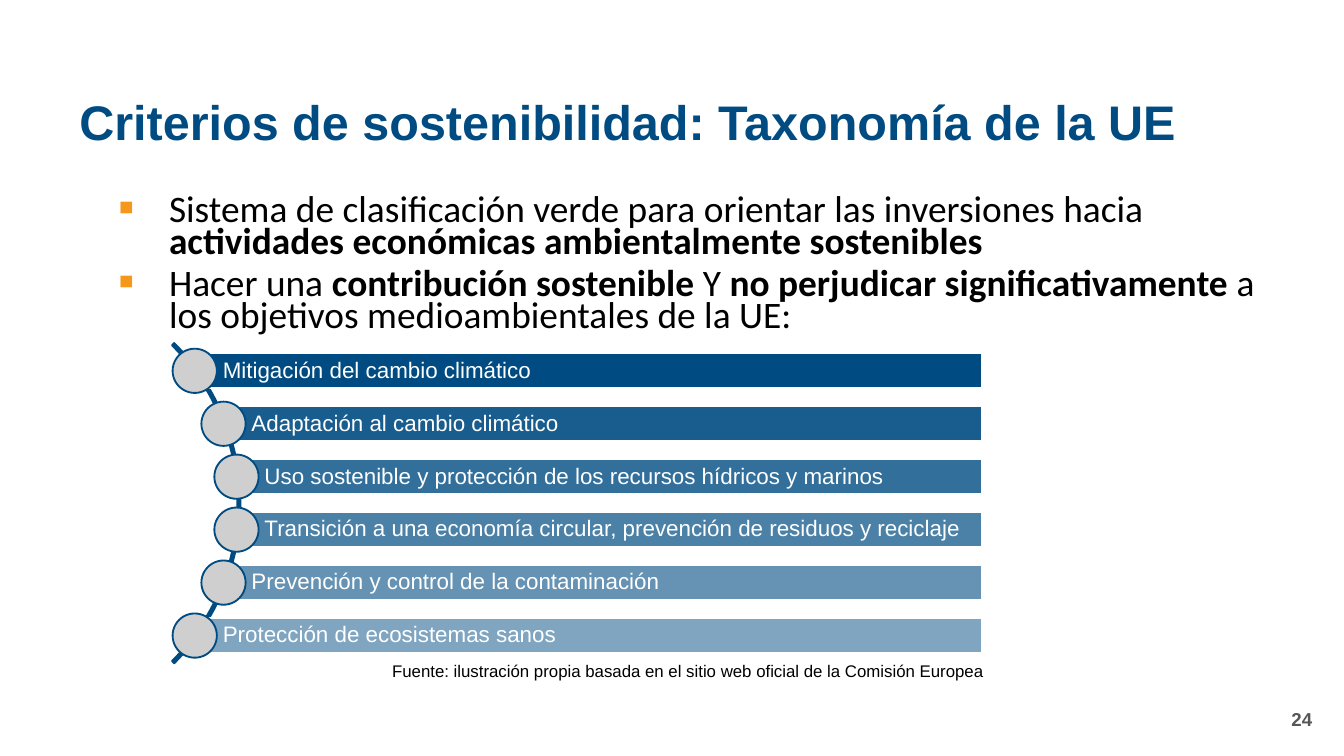
import math

import pptx
import pptx.dml.color
import pptx.enum.shapes
import pptx.enum.text
import pptx.oxml
import pptx.oxml.ns
import pptx.util

Pt = pptx.util.Pt
Shape = pptx.enum.shapes.MSO_SHAPE
Align = pptx.enum.text.PP_ALIGN
Anchor = pptx.enum.text.MSO_ANCHOR

COLOURS = {
    "blue": "004C82",
    "orange": "F4971A",
    "circle": "CFCFCF",
    "grey": "575756",
    "black": "000000",
    "white": "FFFFFF",
}

BULLETS = [
    [("Sistema de clasificación verde para orientar las inversiones hacia ", False),
     ("actividades económicas ambientalmente sostenibles", True)],
    [("Hacer una ", False),
     ("contribución sostenible ", True),
     ("Y ", False),
     ("no perjudicar significativamente", True),
     (" a los objetivos medioambientales de la UE:", False)],
]

OBJECTIVES = [
    "Mitigación del cambio climático",
    "Adaptación al cambio climático",
    "Uso sostenible y protección de los recursos hídricos y marinos",
    "Transición a una economía circular, prevención de residuos y reciclaje",
    "Prevención y control de la contaminación",
    "Protección de ecosistemas sanos",
]

# Circles sit on an arc around this centre, at equal vertical steps.
ARC_X, ARC_Y, ARC_SIZE = 7.56, 269.6, 242.64
RADIUS, ROW_STEP = 120, 28.37
BAR_RIGHT, BAR_HEIGHT, CIRCLE_SIZE = 526.3, 18.9, 23.7


def colour(name):
    return pptx.dml.color.RGBColor.from_string(COLOURS[name])


class SlideBuilder:
    def __init__(self, slide):
        self.slide = slide
        self.font = "Arial"

    def add_run(self, paragraph, text, size, color, bold=False, font=None):
        run = paragraph.add_run()
        run.text = text
        run.font.name = font or self.font
        run.font.size = Pt(size)
        run.font.bold = bold
        run.font.color.rgb = colour(color)

    def title(self, text, left, top, width, height):
        title = self.slide.shapes.title
        title.left, title.top = Pt(left), Pt(top)
        title.width, title.height = Pt(width), Pt(height)
        title.text_frame.vertical_anchor = Anchor.MIDDLE
        paragraph = title.text_frame.paragraphs[0]
        paragraph.alignment = Align.LEFT
        paragraph.line_spacing = 0.9
        self.add_run(paragraph, text, 26, "blue", True)

    def text_box(self, left, top, width, height):
        box = self.slide.shapes.add_textbox(Pt(left), Pt(top), Pt(width), Pt(height))
        box.text_frame.word_wrap = True
        return box.text_frame

    def label(self, text, area, size, color, bold=False, align=Align.LEFT, anchor=Anchor.TOP):
        frame = self.text_box(*area)
        frame.vertical_anchor = anchor
        paragraph = frame.paragraphs[0]
        paragraph.alignment = align
        self.add_run(paragraph, text, size, color, bold)

    def bullet_list(self, items, area):
        frame = self.text_box(*area)
        for index, runs in enumerate(items):
            paragraph = frame.add_paragraph() if index else frame.paragraphs[0]
            self.add_bullet(paragraph)
            paragraph.line_spacing = 0.7
            if index:
                paragraph.space_before = Pt(6)
            for text, bold in runs:
                self.add_run(paragraph, text, 20, "black", bold, "Calibri")

    def add_bullet(self, paragraph):
        properties = paragraph._p.get_or_add_pPr()
        properties.set("marL", str(Pt(48.2)))
        properties.set("indent", str(Pt(-27.2)))
        namespace = pptx.oxml.ns.nsdecls("a")
        for xml in (
            f'<a:buClr {namespace}><a:srgbClr val="{COLOURS["orange"]}"/></a:buClr>',
            f'<a:buSzPct {namespace} val="125000"/>',
            f'<a:buFont {namespace} typeface="Arial"/>',
            f'<a:buChar {namespace} char="▪"/>',
        ):
            properties.append(pptx.oxml.parse_xml(xml))

    def shape(self, kind, left, top, width, height, fill, line):
        shape = self.slide.shapes.add_shape(kind, Pt(left), Pt(top), Pt(width), Pt(height))
        shape.shadow.inherit = False
        shape.fill.solid()
        shape.fill.fore_color.rgb = colour(fill)
        shape.line.color.rgb = colour(line)
        shape.line.width = Pt(1)
        return shape

    def arc(self):
        arc = self.shape(Shape.BLOCK_ARC, ARC_X - ARC_SIZE / 2, ARC_Y - ARC_SIZE / 2,
                         ARC_SIZE, ARC_SIZE, "blue", "blue")
        for index, value in enumerate((189, 27, 0.007)):
            arc.adjustments[index] = value

    def bar(self, text, left, middle, opacity):
        bar = self.shape(Shape.RECTANGLE, left, middle - BAR_HEIGHT / 2,
                         BAR_RIGHT - left, BAR_HEIGHT, "blue", "white")
        self.set_opacity(bar, opacity)
        frame = bar.text_frame
        frame.word_wrap = True
        frame.vertical_anchor = Anchor.MIDDLE
        frame.margin_left = Pt(15)
        frame.margin_top = frame.margin_right = frame.margin_bottom = Pt(2.2)
        paragraph = frame.paragraphs[0]
        paragraph.alignment = Align.LEFT
        paragraph.line_spacing = 0.9
        self.add_run(paragraph, text, 12, "white")

    def set_opacity(self, shape, percent):
        fill = shape._element.spPr.find(pptx.oxml.ns.qn("a:solidFill"))
        namespace = pptx.oxml.ns.nsdecls("a")
        fill[0].append(pptx.oxml.parse_xml(f'<a:alpha {namespace} val="{percent * 1000}"/>'))

    def circle(self, center_x, center_y):
        self.shape(Shape.OVAL, center_x - CIRCLE_SIZE / 2, center_y - CIRCLE_SIZE / 2,
                   CIRCLE_SIZE, CIRCLE_SIZE, "circle", "blue")

    def objectives(self, texts):
        self.arc()
        for index, text in enumerate(texts):
            offset = (index - (len(texts) - 1) / 2) * ROW_STEP
            center_x = ARC_X + math.sqrt(RADIUS ** 2 - offset ** 2)
            self.bar(text, center_x, ARC_Y + offset, 100 - 10 * index)
            self.circle(center_x, ARC_Y + offset)


def main():
    presentation = pptx.Presentation()
    presentation.slide_width, presentation.slide_height = Pt(720), Pt(405)
    builder = SlideBuilder(presentation.slides.add_slide(presentation.slide_layouts[5]))
    builder.bullet_list(BULLETS, (35.3, 102.5, 667.4, 80))
    builder.title("Criterios de sostenibilidad: Taxonomía de la UE", 35.3, 45.4, 674.6, 42.5)
    builder.label("24", (548, 374.4, 162, 21.6), 10, "grey", True, Align.RIGHT, Anchor.MIDDLE)
    builder.objectives(OBJECTIVES)
    builder.label("Fuente: ilustración propia basada en el sitio web oficial de la Comisión Europea",
                  (203, 350.6, 355, 18), 9, "black")
    presentation.save("out.pptx")


if __name__ == "__main__":
    main()
